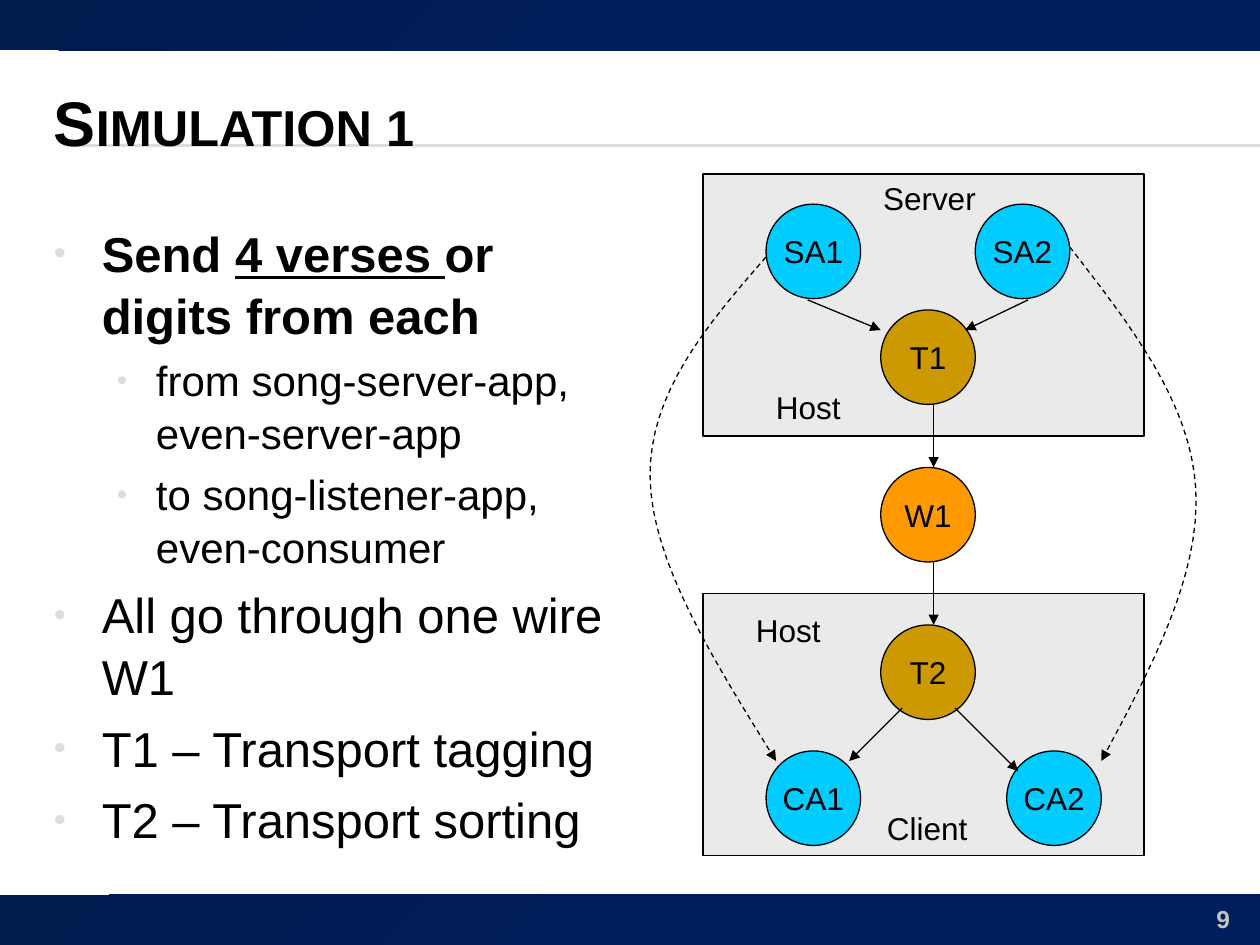
from dataclasses import dataclass

from lxml import etree
from pptx import Presentation
from pptx.dml.color import RGBColor
from pptx.enum import dml, shapes as sh, text as tx
from pptx.oxml import ns
from pptx.util import Inches, Pt


@dataclass(frozen=True)
class Theme:
    font: str = "Arial"
    ink: str = "000000"
    rule: str = "DDDDDD"
    dark: str = "011B4E"
    navy: str = "011F5B"
    page: str = "C3C3C3"
    host: str = "EAEAEA"
    app: str = "00CCFF"
    tag: str = "CC9900"
    wire: str = "FF9900"
    title: int = 36
    body: int = 28
    sub: int = 24
    label: int = 18
    foot: int = 14
    line: float = 0.75


@dataclass(frozen=True)
class Box:
    x: float
    y: float
    w: float
    h: float

    def inner(self, x, y, w, h):
        return Box(self.x + x, self.y + y, w, h)

    def point(self, x, y):
        return Inches(self.x + x), Inches(self.y + y)

    def lengths(self):
        return [Inches(v) for v in (self.x, self.y, self.w, self.h)]


T = Theme()
ALIGN, ANCHOR = tx.PP_ALIGN, tx.MSO_ANCHOR


def rgb(code):
    return RGBColor.from_string(code)


def child(node, tag, **attrs):
    return etree.SubElement(node, ns.qn(tag), attrs)


def add_head(line):
    child(line._element.spPr.get_or_add_ln(), "a:tailEnd", type="triangle")


def add_run(para, words, size=T.label, color=T.ink, bold=False, under=False, caps=False):
    run = para.add_run()
    run.text = words
    font = run.font
    font.name, font.size, font.bold = T.font, Pt(size), bold
    font.color.rgb = rgb(color)
    if under:
        font.underline = True
    if caps:
        run._r.get_or_add_rPr().set("cap", "small")


def add_text(slide, box, words, align=ALIGN.LEFT, anchor=ANCHOR.TOP, wrap=True,
             grow=False, **style):
    frame = slide.shapes.add_textbox(*box.lengths()).text_frame
    frame.word_wrap, frame.vertical_anchor = wrap, anchor
    if grow:
        frame.auto_size = tx.MSO_AUTO_SIZE.SHAPE_TO_FIT_TEXT
    frame.paragraphs[0].alignment = align
    add_run(frame.paragraphs[0], words, **style)


def add_line(slide, start, end, color=T.ink, arrow=False):
    line = slide.shapes.add_connector(sh.MSO_CONNECTOR.STRAIGHT, *start, *end)
    line.line.color.rgb, line.line.width = rgb(color), Pt(T.line)
    if arrow:
        add_head(line)
    child(line._element.spPr, "a:effectLst")


def add_shape(slide, kind, box, color):
    shape = slide.shapes.add_shape(kind, *box.lengths())
    shape.shadow.inherit = False
    shape.fill.solid()
    shape.fill.fore_color.rgb = rgb(color)
    shape.line.color.rgb, shape.line.width = rgb(T.ink), Pt(T.line)
    return shape


def add_band(slide, box):
    band = slide.shapes.add_shape(sh.MSO_SHAPE.RECTANGLE, *box.lengths())
    band.shadow.inherit = False
    band.line.fill.background()
    band.fill.gradient()
    band.fill.gradient_angle = 315
    for stop, color, place in zip(band.fill.gradient_stops, (T.dark, T.navy), (0, 0.5)):
        stop.color.rgb, stop.position = rgb(color), place


def add_node(slide, box, name, color):
    node = add_shape(slide, sh.MSO_SHAPE.OVAL, box, color)
    frame = node.text_frame
    frame.word_wrap, frame.vertical_anchor = False, ANCHOR.MIDDLE
    frame.paragraphs[0].alignment = ALIGN.CENTER
    add_run(frame.paragraphs[0], name)


def bezier(points, steps=16):
    """Yield points along one cubic curve, without its start."""
    for i in range(1, steps + 1):
        t = i / steps
        shares = ((1 - t) ** 3, 3 * t * (1 - t) ** 2, 3 * t * t * (1 - t), t ** 3)
        yield tuple(sum(k * p[axis] for k, p in zip(shares, points)) for axis in (0, 1))


def add_curve(slide, box, points):
    """Draw a dashed arrow through joined cubic curves."""
    spots = [box.point(*p) for i in range(0, len(points) - 1, 3)
             for p in bezier(points[i:i + 4])]
    form = slide.shapes.build_freeform(*box.point(*points[0]))
    form.add_line_segments(spots, close=False)
    curve = form.convert_to_shape()
    curve.shadow.inherit = False
    curve.fill.background()
    curve.line.color.rgb, curve.line.width = rgb(T.ink), Pt(T.line)
    curve.line.dash_style = dml.MSO_LINE.DASH
    add_head(curve)


def add_frame(slide, box):
    """Draw the bands, the title rule and the page number."""
    for y in (1.15, 1.16):
        add_line(slide, box.point(0.56, y), box.point(box.w, y), T.rule)
    for y in (0, box.h - 0.4):
        add_band(slide, box.inner(0, y, box.w, 0.4))
    add_text(slide, box.inner(9.03, 7.16, 0.83, 0.27), "9", align=ALIGN.RIGHT,
             anchor=ANCHOR.MIDDLE, size=T.foot, color=T.page, bold=True)


def add_bullets(slide, box, items):
    frame = slide.shapes.add_textbox(*box.lengths()).text_frame
    frame.word_wrap = True
    for i, (level, runs) in enumerate(items):
        para = frame.add_paragraph() if i else frame.paragraphs[0]
        size, left, hang = ((T.body, 0.38, 0.38), (T.sub, 0.81, 0.31))[level]
        para.level, para.line_spacing = level, 1.05
        para.space_before = Pt(size * 0.2)
        props = para._p.get_or_add_pPr()
        props.set("marL", str(Inches(left)))
        props.set("indent", str(-Inches(hang)))
        child(child(props, "a:buClr"), "a:srgbClr", val=T.rule)
        child(props, "a:buSzPct", val="70000")
        child(props, "a:buFont", typeface=T.font)
        child(props, "a:buChar", char="•")
        for words, style in runs:
            add_run(para, words, size=size, **style)


def add_network(slide, box):
    """Draw both hosts, their nodes and the routes between them."""
    for y in (0, 3.33):
        add_shape(slide, sh.MSO_SHAPE.RECTANGLE, box.inner(0, y, box.w, 2.08), T.host)
    nodes = (("SA1", 0.5, 0.24, T.app), ("SA2", 2.16, 0.24, T.app),
             ("T1", 1.41, 1.08, T.tag), ("T2", 1.41, 3.58, T.tag),
             ("CA1", 0.5, 4.58, T.app), ("CA2", 2.41, 4.58, T.app),
             ("W1", 1.41, 2.33, T.wire))
    for name, x, y, color in nodes:
        add_node(slide, box.inner(x, y, 0.75, 0.75), name, color)
    arrows = (((0.83, 1), (1.41, 1.24)), ((2.58, 1), (2.08, 1.24)),
              ((1.83, 1.83), (1.83, 2.33)), ((1.83, 3.08), (1.83, 3.58)),
              ((1.58, 4.24), (1.16, 4.66)), ((2, 4.24), (2.5, 4.74)))
    for start, end in arrows:
        add_line(slide, box.point(*start), box.point(*end), arrow=True)
    add_curve(slide, box, ((0.5, 0.66), (0.03, 1.2), (-0.43, 1.74), (-0.42, 2.41),
                           (-0.41, 3.08), (0.09, 3.87), (0.58, 4.66)))
    add_curve(slide, box, ((2.91, 0.58), (3.39, 1.2), (3.87, 1.81), (3.91, 2.5),
                           (3.95, 3.18), (3.56, 3.92), (3.16, 4.66)))
    labels = (("Host", 0.32, 3.42, 0.72), ("Host", 0.48, 1.65, 0.72),
              ("Server", 1.33, -0.01, 0.95), ("Client", 1.36, 4.99, 0.85))
    for words, x, y, width in labels:
        add_text(slide, box.inner(x, y, width, 0.4), words, wrap=False, grow=True)


def main():
    deck = Presentation()
    deck.slide_width, deck.slide_height = Inches(10), Inches(7.5)
    slide = deck.slides.add_slide(deck.slide_layouts[6])
    add_frame(slide, Box(0, 0, 10, 7.5))
    add_text(slide, Box(0.33, 0.5, 9.5, 0.92), "Simulation 1", anchor=ANCHOR.MIDDLE,
             size=T.title, bold=True, caps=True)
    bold = {"bold": True}
    add_bullets(slide, Box(0.33, 1.7, 4.74, 5.3), (
        (0, (("Send ", bold), ("4 verses ", {"bold": True, "under": True}),
             ("or digits from each", bold))),
        (1, (("from song-server-app, even-server-app", {}),)),
        (1, (("to song-listener-app, even-consumer", {}),)),
        (0, (("All go through one wire W1", {}),)),
        (0, (("T1 – Transport tagging", {}),)),
        (0, (("T2 – Transport sorting", {}),)),
    ))
    add_network(slide, Box(5.58, 1.38, 3.5, 5.41))
    deck.save("out.pptx")


if __name__ == "__main__":
    main()
